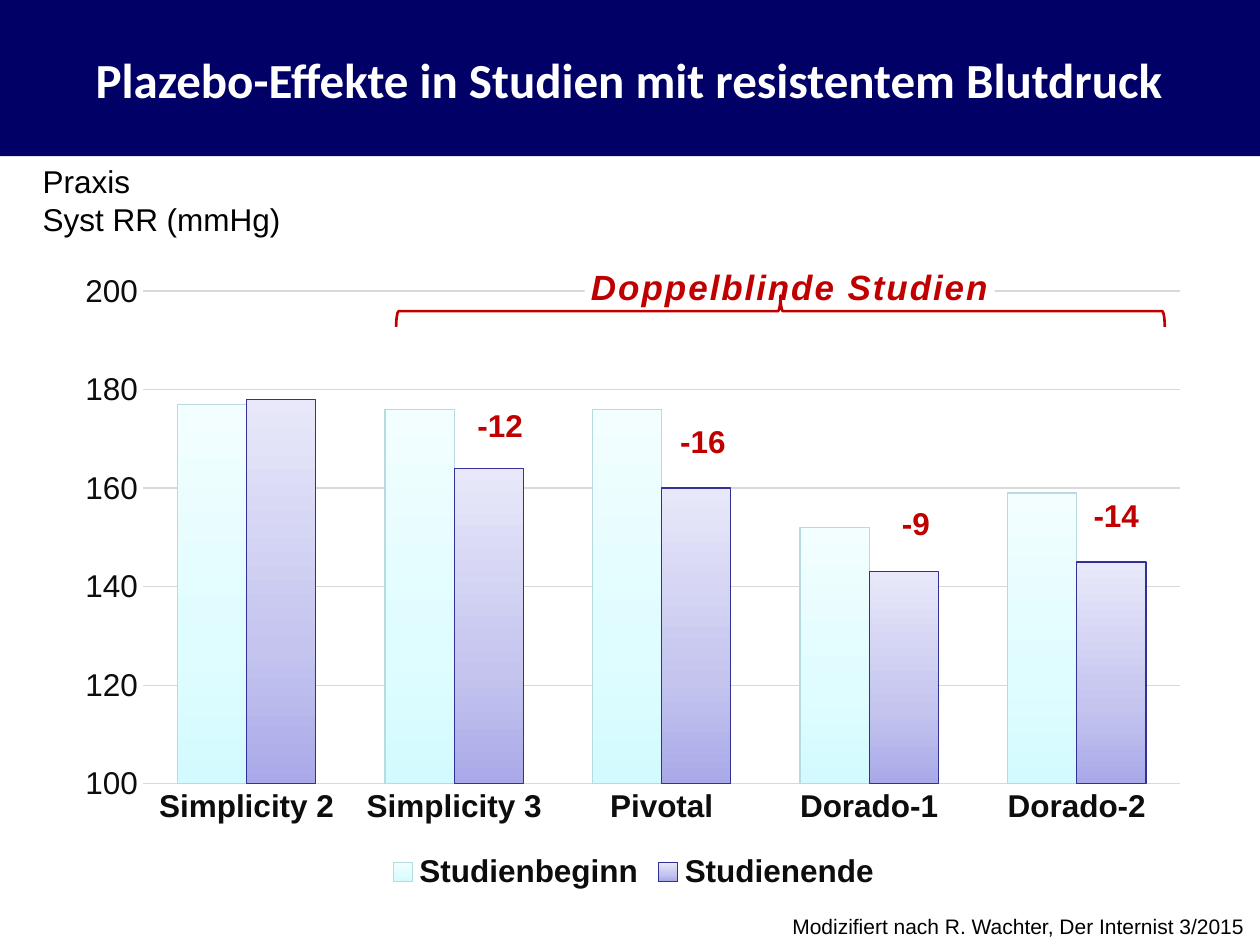
from lxml.etree import SubElement
from pptx import Presentation
from pptx.chart.data import CategoryChartData
from pptx.dml.color import RGBColor
from pptx.enum.chart import XL_CHART_TYPE, XL_LEGEND_POSITION, XL_TICK_MARK
from pptx.enum.shapes import MSO_SHAPE
from pptx.enum.text import MSO_AUTO_SIZE, PP_ALIGN
from pptx.oxml import parse_xml
from pptx.oxml.ns import nsdecls, qn
from pptx.util import Pt

THEME = {
    "navy": "000066", "white": "FFFFFF", "black": "000000", "red": "C00000",
    "label": "0D0D0D", "grid": "D9D9D9",
    "sans": "Arial", "heading": "Calibri",
    "title": 28, "callout": 20, "body": 18, "source": 12, "hairline": 0.75, "brace": 1.5,
}

TITLE = "Plazebo-Effekte in Studien mit resistentem Blutdruck"
CALLOUT = "Doppelblinde Studien"
AXIS_LABEL = ["Praxis", "Syst RR (mmHg)"]
SOURCE = "Modizifiert nach R. Wachter, Der Internist 3/2015"
STUDIES = ["Simplicity 2", "Simplicity 3", "Pivotal", "Dorado-1", "Dorado-2"]
SERIES = [
    {"name": "Studienbeginn", "values": [177, 176, 176, 152, 159],
     "stops": [(0, "D3FBFF"), (35, "DFFCFF"), (100, "F2FEFF")], "line": "B7DBDE"},
    {"name": "Studienende", "values": [178, 164, 160, 143, 145],
     "stops": [(0, "A9A9E9"), (35, "C4C4EF"), (100, "E8E8FA")], "line": "323296"},
]
DIFFERENCES = [
    ("-12", (265.7, 228.2, 41, 29)),
    ("-16", (381.6, 237.6, 41, 29)),
    ("-9", (508.3, 284.4, 31, 29)),
    ("-14", (617.8, 280.1, 41, 29)),
]
PLOT_LAYOUT = {"x": 0.07, "y": 0.152, "w": 0.909, "h": 0.691}
CALLOUT_LAYOUT = {"x": 0.457, "y": 0.106}


def style_font(font, size, color, name=THEME["sans"], bold=False, italic=False):
    values = {"size": Pt(size), "name": name, "bold": bold, "italic": italic}
    for key, value in values.items():
        setattr(font, key, value)
    font.color.rgb = RGBColor.from_string(color)


def style_line(line, color, width=THEME["hairline"]):
    line.color.rgb = RGBColor.from_string(color)
    line.width = Pt(width)


def add_text(page, lines, place, size, color, align=PP_ALIGN.LEFT, wrap=False, **look):
    box = page.shapes.add_textbox(*map(Pt, place))
    frame = box.text_frame
    frame.word_wrap = wrap
    frame.auto_size = MSO_AUTO_SIZE.SHAPE_TO_FIT_TEXT
    for index, line in enumerate(lines):
        para = frame.paragraphs[0] if index == 0 else frame.add_paragraph()
        para.alignment = align
        span = para.add_run()
        span.text = line
        style_font(span.font, size, color, **look)


def manual_layout(fractions, inner=False):
    target = '<c:layoutTarget val="inner"/>' if inner else ""
    modes = "".join(f'<c:{key}Mode val="edge"/>' for key in "xy")
    numbers = "".join(f'<c:{key} val="{value}"/>' for key, value in fractions.items())
    return parse_xml(f'<c:layout {nsdecls("c")}><c:manualLayout>{target}{modes}{numbers}'
                     '</c:manualLayout></c:layout>')


def set_layout(parent, layout, position):
    for old in parent.findall(qn("c:layout")):
        parent.remove(old)
    parent.insert(position, layout)


def fill_gradient(series, stops):
    properties = series._element.get_or_add_spPr()
    gradient = SubElement(properties, qn("a:gradFill"), rotWithShape="1")
    stop_list = SubElement(gradient, qn("a:gsLst"))
    for percent, color in stops:
        stop = SubElement(stop_list, qn("a:gs"), pos=str(percent * 1000))
        SubElement(stop, qn("a:srgbClr"), val=color)
    SubElement(gradient, qn("a:lin"), ang="16200000", scaled="1")


def add_callout(chart):
    title = chart.chart_title
    title.include_in_layout = False
    span = title.text_frame.paragraphs[0].add_run()
    span.text = CALLOUT
    style_font(span.font, THEME["callout"], THEME["red"], bold=True, italic=True)
    span._r.get_or_add_rPr().set("spc", "100")
    title.format.fill.solid()
    title.format.fill.fore_color.rgb = RGBColor.from_string(THEME["white"])
    set_layout(title._element, manual_layout(CALLOUT_LAYOUT), 1)
    title._element.find(qn("c:overlay")).set("val", "1")


def add_pressure_chart(page):
    data = CategoryChartData()
    data.categories = STUDIES
    for entry in SERIES:
        data.add_series(entry["name"], entry["values"])
    chart = page.shapes.add_chart(
        XL_CHART_TYPE.COLUMN_CLUSTERED, *map(Pt, (36, 104.4, 652.3, 407.5)), data).chart
    style_font(chart.font, THEME["body"], THEME["black"])
    add_callout(chart)
    plot = chart.plots[0]
    plot.gap_width = 100
    plot.overlap = 0
    plot.vary_by_categories = False
    for series, entry in zip(plot.series, SERIES):
        fill_gradient(series, entry["stops"])
        style_line(series.format.line, entry["line"])
    for axis, bold in ((chart.category_axis, True), (chart.value_axis, False)):
        axis.major_tick_mark = axis.minor_tick_mark = XL_TICK_MARK.NONE
        style_font(axis.tick_labels.font, THEME["body"], THEME["label"], bold=bold)
    style_line(chart.category_axis.format.line, THEME["grid"])
    scale = {"minimum_scale": 100, "maximum_scale": 200, "major_unit": 20}
    for key, value in scale.items():
        setattr(chart.value_axis, key, value)
    chart.value_axis.format.line.fill.background()
    style_line(chart.value_axis.major_gridlines.format.line, THEME["grid"])
    chart.has_legend = True
    chart.legend.position = XL_LEGEND_POSITION.BOTTOM
    chart.legend.include_in_layout = False
    style_font(chart.legend.font, THEME["body"], THEME["label"], bold=True)
    plot_area = chart._chartSpace.find(".//" + qn("c:plotArea"))
    set_layout(plot_area, manual_layout(PLOT_LAYOUT, inner=True), 0)


def add_banner(page):
    banner = page.shapes.add_shape(MSO_SHAPE.RECTANGLE, *map(Pt, (0, 0, 720, 89.3)))
    banner.shadow.inherit = False
    banner.fill.solid()
    banner.fill.fore_color.rgb = RGBColor.from_string(THEME["navy"])
    banner.line.fill.background()
    add_text(page, [TITLE], (-1.4, 24.5, 721.4, 41), THEME["title"], THEME["white"],
             align=PP_ALIGN.CENTER, wrap=True, name=THEME["heading"], bold=True)


def add_brace(page):
    brace = page.shapes.add_shape(MSO_SHAPE.RIGHT_BRACE, *map(Pt, (437, -41.8, 18, 439.2)))
    brace.rotation = 270
    brace.shadow.inherit = False
    brace.fill.background()
    style_line(brace.line, THEME["red"], THEME["brace"])


def main():
    deck = Presentation()
    deck.slide_width, deck.slide_height = Pt(720), Pt(540)
    page = deck.slides.add_slide(deck.slide_layouts[6])
    add_banner(page)
    add_pressure_chart(page)
    add_brace(page)
    for text, place in DIFFERENCES:
        add_text(page, [text], place, THEME["body"], THEME["red"], bold=True)
    add_text(page, AXIS_LABEL, (17.3, 89.3, 152, 51), THEME["body"], THEME["black"])
    add_text(page, [SOURCE], (445.7, 518.4, 275, 21.6), THEME["source"], THEME["black"])
    deck.save("out.pptx")


if __name__ == "__main__":
    main()
